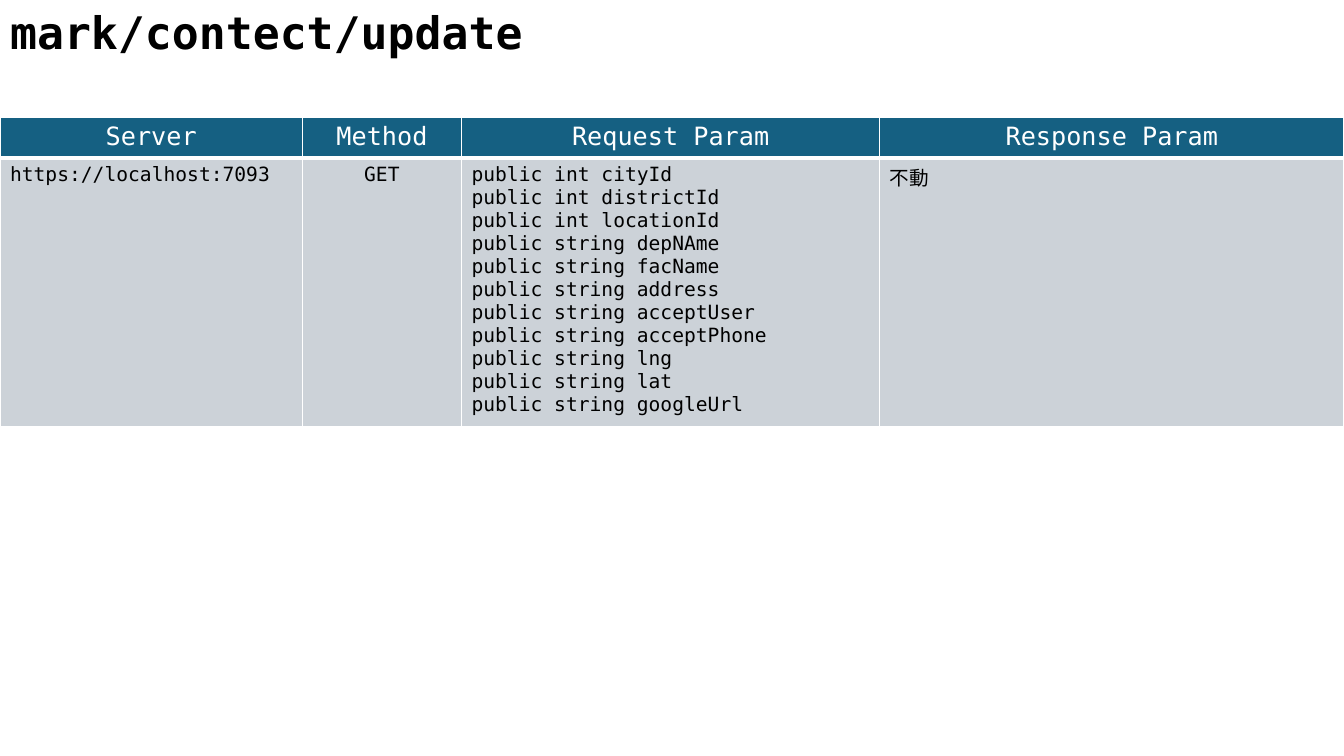
from lxml.etree import SubElement
from pptx import Presentation
from pptx.dml.color import RGBColor as Rgb
from pptx.enum.text import MSO_ANCHOR as Anchor, MSO_AUTO_SIZE as Fit, PP_ALIGN as Align
from pptx.oxml.ns import qn
from pptx.util import Cm, Pt

BLACK = Rgb(0x00, 0x00, 0x00)
WHITE = Rgb(0xFF, 0xFF, 0xFF)
TEAL = Rgb(0x15, 0x60, 0x82)
GREY = Rgb(0xCC, 0xD2, 0xD8)

HEADS = ["Server", "Method", "Request Param", "Response Param"]
FIELDS = [
    "int cityId", "int districtId", "int locationId",
    "string depNAme", "string facName", "string address",
    "string acceptUser", "string acceptPhone",
    "string lng", "string lat", "string googleUrl",
]
PARAMS = "\n".join(f"public {field}" for field in FIELDS)
VALUES = ["https://localhost:7093", "GET", PARAMS, "不動"]
ALIGNS = [Align.LEFT, Align.CENTER, Align.LEFT, Align.LEFT]
WIDTHS = [7.62, 4.01, 10.54, 11.7]


def write(frame, text, font, size, color=BLACK, bold=False, align=Align.LEFT):
    """Fill a text frame with one paragraph per line."""
    frame.text = text
    for para in frame.paragraphs:
        para.alignment = align
        para.font.name = font
        para.font.size = Pt(size)
        para.font.bold = bold
        para.font.color.rgb = color


class Page:
    """Hold the font and the current slide."""

    def __init__(self, deck, font):
        self.font = font
        self.slide = deck.slides.add_slide(deck.slide_layouts[5])

    def title(self, text, width, height):
        """Place the title in the top left corner."""
        shape = self.slide.shapes.title
        shape.left, shape.top = Cm(0), Cm(0)
        shape.width, shape.height = Cm(width), Cm(height)
        frame = shape.text_frame
        write(frame, text, self.font, 32, bold=True)
        frame.vertical_anchor = Anchor.TOP
        frame.auto_size = Fit.SHAPE_TO_FIT_TEXT

    def border(self, cell, base):
        """Draw white edges with the given bottom width."""
        props = cell._tc.get_or_add_tcPr()
        for side, width in zip("LRTB", (1, 1, 1, base)):
            line = SubElement(props, qn(f"a:ln{side}"), w=str(Pt(width)))
            fill = SubElement(line, qn("a:solidFill"))
            SubElement(fill, qn("a:srgbClr"), val=str(WHITE))

    def cell(self, cell, text, fill, base=1, **style):
        """Fill one table cell."""
        self.border(cell, base)
        cell.fill.solid()
        cell.fill.fore_color.rgb = fill
        write(cell.text_frame, text, self.font, **style)

    def table(self, top, widths, heights):
        """Add the table of the endpoint."""
        grid = self.slide.shapes.add_table(
            len(heights), len(widths), Cm(0), Cm(top),
            Cm(sum(widths)), Cm(sum(heights))).table
        for row, height in zip(grid.rows, heights):
            row.height = Cm(height)
        for col, width in enumerate(widths):
            grid.columns[col].width = Cm(width)
            self.cell(grid.cell(0, col), HEADS[col], TEAL, base=3,
                      size=18, color=WHITE, align=Align.CENTER)
            self.cell(grid.cell(1, col), VALUES[col], GREY,
                      size=14, align=ALIGNS[col])


def main():
    """Build and save the slide."""
    deck = Presentation()
    deck.slide_width, deck.slide_height = Cm(33.87), Cm(19.05)
    page = Page(deck, "DejaVu Sans Mono")
    page.table(2.95, WIDTHS, [1.03, 6.6])
    page.title("mark/contect/update", 16.23, 1.63)
    deck.save("out.pptx")


if __name__ == "__main__":
    main()
